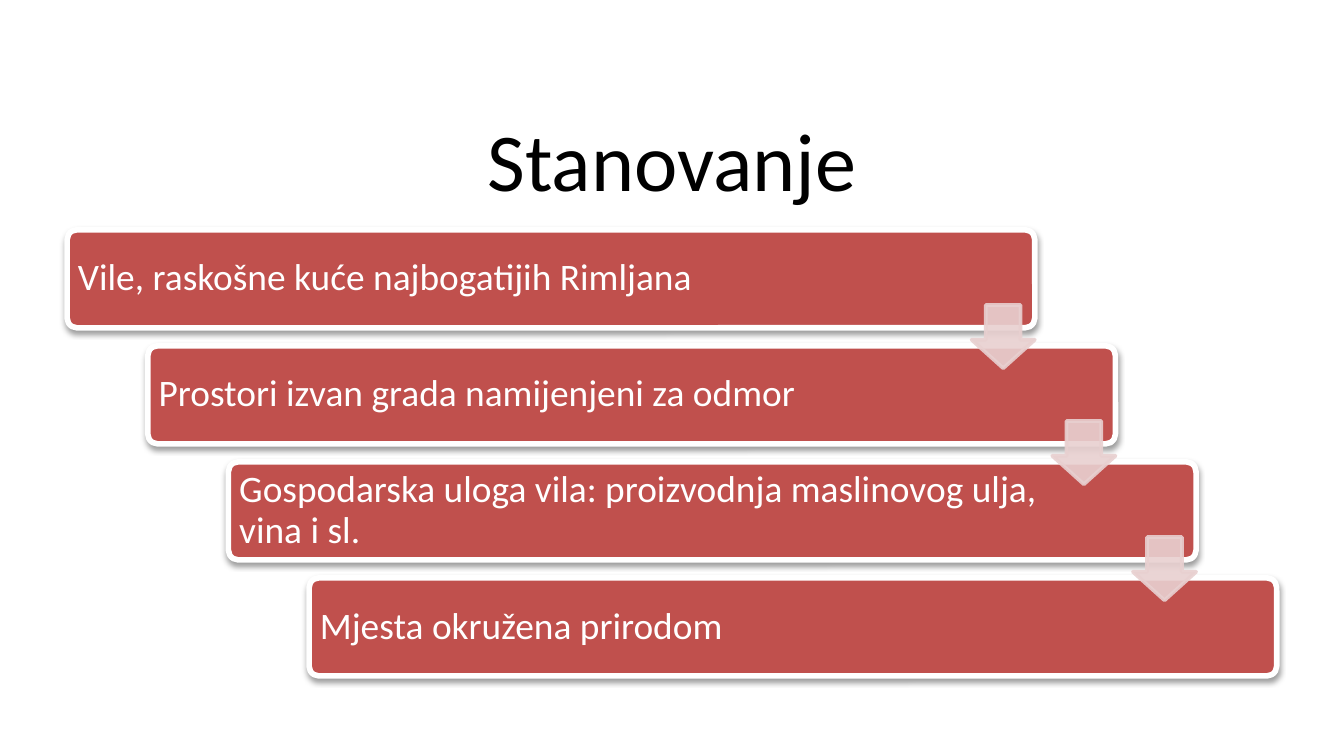
from dataclasses import dataclass

from lxml.etree import SubElement
from pptx import Presentation
from pptx.dml.color import RGBColor
from pptx.enum.shapes import MSO_SHAPE
from pptx.enum.text import MSO_ANCHOR, PP_ALIGN
from pptx.oxml.ns import qn
from pptx.shapes.autoshape import Shape
from pptx.slide import Slide
from pptx.util import Inches, Pt

COLORS = {"title": "000000", "bar": "C0504D", "light": "FFFFFF", "arrow": "E8D0D0", "shadow": "000000"}
FONT = "Calibri"
SLIDE_WIDTH = 10
SLIDE_HEIGHT = SLIDE_WIDTH * 9 / 16
LEFT, TOP, LAST_TOP = 0.5, 1.71, 4.3
BAR_WIDTH, BAR_HEIGHT = 7.2, 0.73
ARROW_LEFT, ARROW_TOP, ARROW_SIZE = 7.23, 2.27, 0.47


@dataclass(frozen=True)
class Stage:
    """One step of the staircase and the width of its wording."""

    wording: str
    width: float = 6.12


STAGES = [
    Stage("Vile, raskošne kuće najbogatijih Rimljana", 6.39),
    Stage("Prostori izvan grada namijenjeni za odmor"),
    Stage("Gospodarska uloga vila: proizvodnja maslinovog ulja, vina i sl."),
    Stage("Mjesta okružena prirodom"),
]
STEP_X = 0.6
STEP_Y = (LAST_TOP - TOP) / (len(STAGES) - 1)


def add_wording(slide: Slide, wording: str, left: float, top: float, width: float, height: float,
                size: float, color: str, align: PP_ALIGN, inset: float) -> None:
    """Add a vertically centred text."""
    box = slide.shapes.add_textbox(Inches(left), Inches(top), Inches(width), Inches(height))
    frame = box.text_frame
    frame.word_wrap = True
    frame.vertical_anchor = MSO_ANCHOR.MIDDLE
    frame.margin_left = frame.margin_right = Inches(inset)
    frame.margin_top = frame.margin_bottom = Inches(inset)
    paragraph = frame.paragraphs[0]
    paragraph.text = wording
    paragraph.alignment = align
    paragraph.line_spacing = 0.9
    paragraph.font.name = FONT
    paragraph.font.size = Pt(size)
    paragraph.font.color.rgb = RGBColor.from_string(COLORS[color])


def add_block(slide: Slide, preset: MSO_SHAPE, left: float, top: float, width: float, height: float,
              adjustments: list[float], fill: str, line: str, line_width: float) -> Shape:
    """Add a filled and outlined preset shape without a shadow."""
    block = slide.shapes.add_shape(preset, Inches(left), Inches(top), Inches(width), Inches(height))
    for index, value in enumerate(adjustments):
        block.adjustments[index] = value
    block.shadow.inherit = False
    block.fill.solid()
    block.fill.fore_color.rgb = RGBColor.from_string(COLORS[fill])
    block.line.color.rgb = RGBColor.from_string(COLORS[line])
    block.line.width = Pt(line_width)
    return block


def cast_shadow(block: Shape) -> None:
    """Give a block a soft shadow below it."""
    effects = block.element.spPr.find(qn("a:effectLst"))
    shadow = SubElement(effects, qn("a:outerShdw"), blurRad=str(Pt(3.1)), dist=str(Pt(1.6)),
                        dir="5400000", rotWithShape="0")
    color = SubElement(shadow, qn("a:srgbClr"), val=COLORS["shadow"])
    SubElement(color, qn("a:alpha"), val="38000")


def add_stage(slide: Slide, stage: Stage, index: int) -> None:
    """Add the bar of one stage with its wording."""
    left, top = LEFT + index * STEP_X, TOP + index * STEP_Y
    bar = add_block(slide, MSO_SHAPE.ROUNDED_RECTANGLE, left, top, BAR_WIDTH, BAR_HEIGHT,
                    [0.1], "bar", "light", 3)
    cast_shadow(bar)
    add_wording(slide, stage.wording, left, top, stage.width, BAR_HEIGHT, 20, "light", PP_ALIGN.LEFT, 0.08)


def add_arrow(slide: Slide, index: int) -> None:
    """Add the translucent arrow that leads to the next stage."""
    arrow = add_block(slide, MSO_SHAPE.DOWN_ARROW, ARROW_LEFT + index * STEP_X, ARROW_TOP + index * STEP_Y,
                      ARROW_SIZE, ARROW_SIZE, [0.55, 0.45], "arrow", "arrow", 2)
    for color in arrow.element.spPr.iter(qn("a:srgbClr")):
        SubElement(color, qn("a:alpha"), val="90000")


def main() -> None:
    """Build the slide and save it."""
    presentation = Presentation()
    presentation.slide_width, presentation.slide_height = Inches(SLIDE_WIDTH), Inches(SLIDE_HEIGHT)
    slide = presentation.slides.add_slide(presentation.slide_layouts[6])
    add_wording(slide, "Stanovanje", 0.5, 0.84, 9, 0.78, 44, "title", PP_ALIGN.CENTER, 0.05)
    for index, stage in enumerate(STAGES):
        add_stage(slide, stage, index)
    for index in range(len(STAGES) - 1):
        add_arrow(slide, index)
    presentation.save("out.pptx")


if __name__ == "__main__":
    main()
